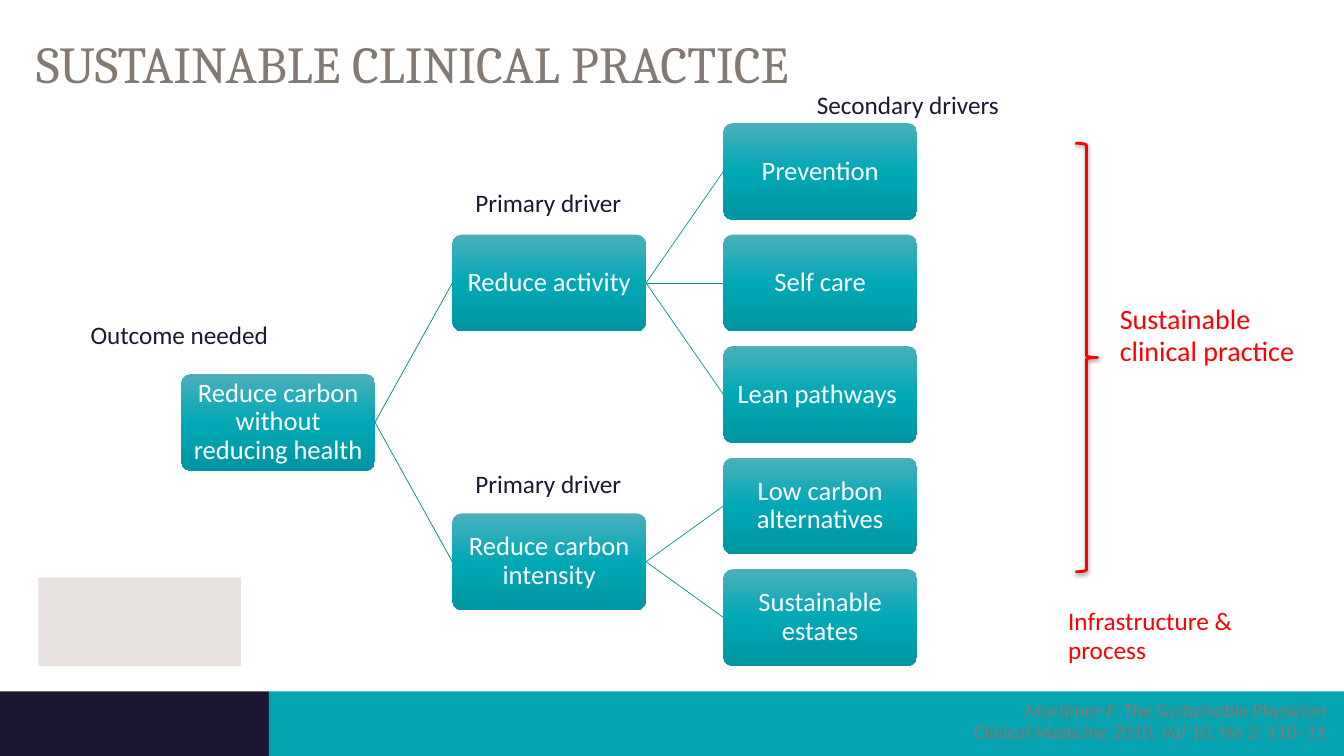
from copy import deepcopy

from lxml import etree
from pptx import Presentation
from pptx.dml.color import RGBColor
from pptx.enum.shapes import MSO_CONNECTOR, MSO_SHAPE as SHAPE
from pptx.enum.text import MSO_ANCHOR as ANCHOR, PP_ALIGN as ALIGN
from pptx.oxml import parse_xml
from pptx.oxml.ns import nsdecls, qn
from pptx.util import Cm, Pt

NAVY, TEAL, GREY, RED = "1E1734", "06A3B0", "837A73", "FF0000"
NODE_W, NODE_H = 4.88, 2.44
TREE_X, TREE_Y, COLUMN_STEP, ROW_STEP = 4.57, 3.1, 6.83, 2.81
LEVEL_LINES = ["05838D", "0594A0"]
NODE_STOPS = [(0, "4BAFBC"), (0.5, "00A8B6"), (1, "0095A2")]

DRIVERS = ("Reduce carbon without reducing health", [
    ("Reduce activity", [("Prevention", []), ("Self care", []), ("Lean pathways ", [])]),
    ("Reduce carbon intensity", [("Low carbon alternatives", []), ("Sustainable estates", [])]),
])
LABELS = [
    ("Outcome needed", 1.42, 7.92, 6.2),
    ("Secondary drivers", 18.92, 2.13, 7.92),
    ("Primary driver", 10.72, 4.6, 6.2),
    ("Primary driver", 10.72, 11.66, 6.2),
]


def rgb(value):
    return RGBColor.from_string(value)


class Deck:
    font = "Calibri"

    def __init__(self):
        self.prs = Presentation()
        self.prs.slide_width, self.prs.slide_height = Cm(33.87), Cm(19.05)
        self.s = self.prs.slides.add_slide(self.prs.slide_layouts[6])
        self.next_row = 0

    def fill_text(self, tf, lines, size, color, align, spacing, inset, anchor, font=None, italic=False):
        tf.word_wrap = True
        tf.vertical_anchor = anchor
        tf.margin_left = tf.margin_right = Cm(inset[0])
        tf.margin_top = tf.margin_bottom = Cm(inset[1])
        for i, line in enumerate(lines):
            p = tf.add_paragraph() if i else tf.paragraphs[0]
            p.text = line
            p.alignment = align
            p.line_spacing = spacing
            p.font.name = font or self.font
            p.font.size = Pt(size)
            p.font.color.rgb = rgb(color)
            p.font.italic = italic

    def text(self, lines, x, y, w, h, size, color, align=ALIGN.LEFT, spacing=0.95,
             inset=(0, 0), anchor=ANCHOR.TOP, **style):
        sp = self.s.shapes.add_textbox(Cm(x), Cm(y), Cm(w), Cm(h))
        self.fill_text(sp.text_frame, lines, size, color, align, spacing, inset, anchor, **style)

    def shape(self, kind, x, y, w, h, fill=None):
        sp = self.s.shapes.add_shape(kind, Cm(x), Cm(y), Cm(w), Cm(h))
        sp.shadow.inherit = False
        sp.line.fill.background()
        if fill:
            sp.fill.solid()
            sp.fill.fore_color.rgb = rgb(fill)
        else:
            sp.fill.background()
        return sp

    def node(self, text, x, y):
        sp = self.shape(SHAPE.ROUNDED_RECTANGLE, x, y, NODE_W, NODE_H)
        sp.adjustments[0] = 0.1
        sp.fill.gradient()
        sp.fill.gradient_angle = 270
        stops = sp._element.spPr.find(".//" + qn("a:gsLst"))
        stops.append(deepcopy(stops[0]))
        for stop, (position, color) in zip(sp.fill.gradient_stops, NODE_STOPS):
            stop.position = position
            stop.color.rgb = rgb(color)
        self.fill_text(sp.text_frame, [text], 19, "FFFFFF", ALIGN.CENTER, 0.9, (0.1, 0.1), ANCHOR.MIDDLE)

    def link(self, x1, y1, x2, y2, color):
        line = self.s.shapes.add_connector(MSO_CONNECTOR.STRAIGHT, Cm(x1), Cm(y1), Cm(x2), Cm(y2))
        line.line.color.rgb = rgb(color)
        line.line.width = Pt(0.5)
        etree.SubElement(line._element.spPr, qn("a:effectLst"))

    def tree(self, branch, level=0):
        text, children = branch
        rows = [self.tree(child, level + 1) for child in children]
        if rows:
            row = (rows[0] + rows[-1]) / 2
        else:
            row = self.next_row
            self.next_row += 1
        x, y = TREE_X + level * COLUMN_STEP, TREE_Y + row * ROW_STEP
        for child_row in rows:
            self.link(x + NODE_W, y + NODE_H / 2, x + COLUMN_STEP,
                      TREE_Y + child_row * ROW_STEP + NODE_H / 2, LEVEL_LINES[level])
        self.node(text, x, y)
        return row

    def brace(self, x, y, w, h):
        sp = self.shape(SHAPE.RIGHT_BRACE, x, y, w, h)
        sp.adjustments[0] = 0.084
        sp.line.color.rgb = rgb(RED)
        sp.line.width = Pt(2)
        sp._element.spPr.find(qn("a:effectLst")).append(parse_xml(
            f'<a:outerShdw {nsdecls("a")} blurRad="{Pt(3.1)}" dist="{Pt(1.6)}" dir="5400000" rotWithShape="0">'
            '<a:srgbClr val="000000"><a:alpha val="38000"/></a:srgbClr></a:outerShdw>'))


def main():
    deck = Deck()
    deck.shape(SHAPE.RECTANGLE, 0, 17.42, 6.78, 1.63, NAVY)
    deck.shape(SHAPE.RECTANGLE, 6.78, 17.42, 27.09, 1.63, TEAL)
    deck.tree(DRIVERS)
    deck.text(["Mortimer-F. The Sustainable Physician", "Clinical Medicine 2010, Vol 10, No 2: 110–11"],
              19.71, 17.63, 13.72, 1.14, 14, GREY, ALIGN.RIGHT, italic=True)
    deck.brace(27.1, 3.61, 0.56, 10.8)
    deck.text(["Sustainable clinical practice"], 28.22, 7.67, 5.21, 1.63, 20, RED)
    for label, x, y, w in LABELS:
        deck.text([label], x, y, w, 1.02, 18, NAVY, ALIGN.CENTER, 1, (0.25, 0.13))
    deck.text(["Infrastructure & process"], 26.92, 15.32, 5.21, 1.47, 18, RED)
    deck.shape(SHAPE.RECTANGLE, 0.97, 14.55, 5.1, 2.24, "E6E1DE")
    deck.text(["SUSTAINABLE CLINICAL PRACTICE"], 0.66, -0.66, 30.73, 3.18, 37, GREY,
              spacing=0.9, inset=(0.25, 0.13), anchor=ANCHOR.BOTTOM, font="Cambria")
    deck.prs.save("out.pptx")


if __name__ == "__main__":
    main()
